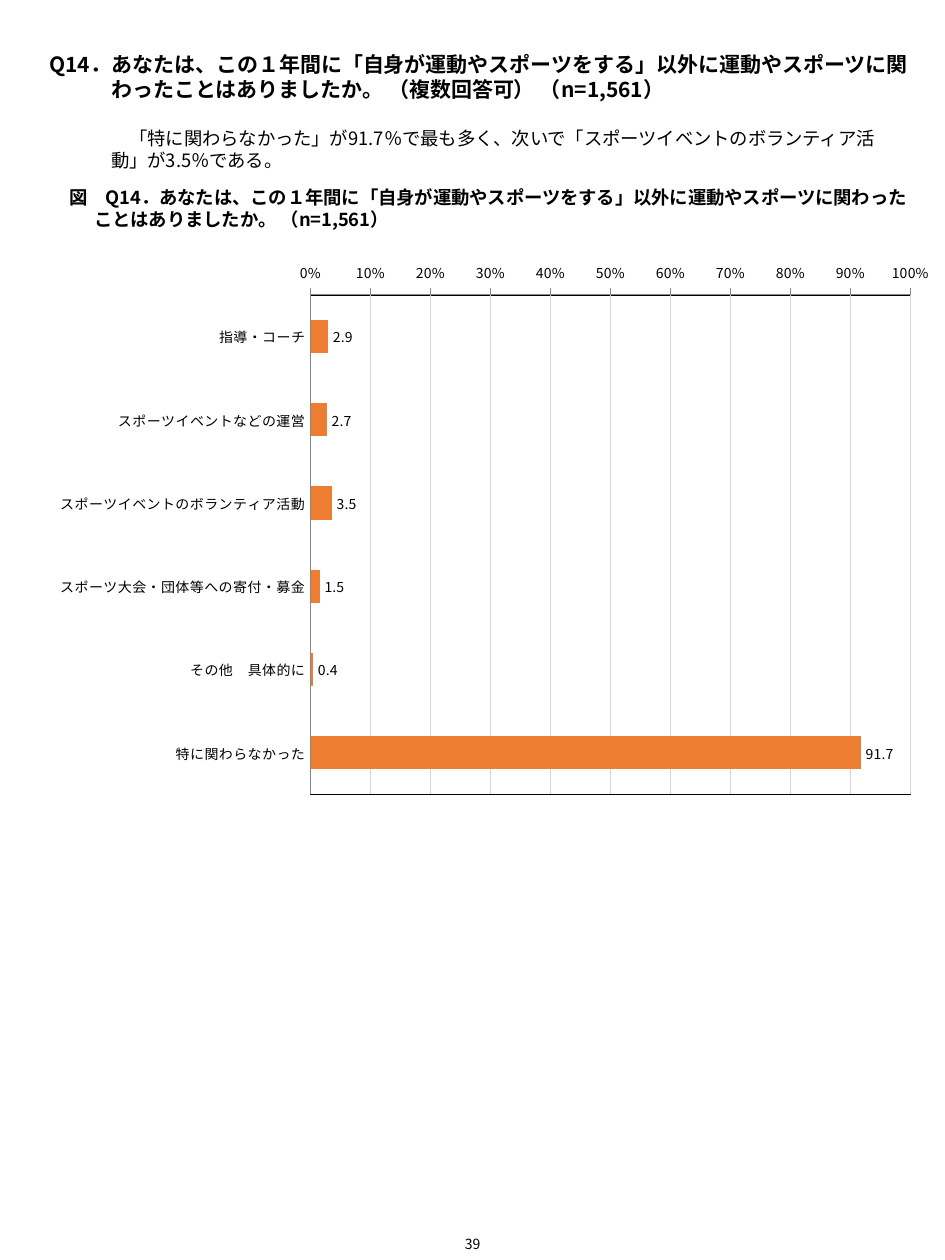
"""Build the survey slide for question 14 with its bar chart."""
from lxml import etree
from pptx import Presentation
from pptx.chart.data import CategoryChartData
from pptx.dml.color import RGBColor
from pptx.enum import chart as ch, text
from pptx.oxml import parse_xml
from pptx.oxml.ns import nsdecls, qn
from pptx.util import Pt

FONT = "Noto Sans CJK JP"
BLACK = RGBColor(0, 0, 0)
ORANGE = RGBColor(0xED, 0x7D, 0x31)
GRAY = RGBColor(0x88, 0x88, 0x88)
PALE = RGBColor(0xD3, 0xD3, 0xD3)
ASK = "Q14．あなたは、この１年間に「自身が運動やスポーツをする」以外に運動やスポーツに関わったことはありましたか。"
COUNT = " （n=1,561）"


def write(para, words, size=10.5, bold=False, left=0, first=0, gap=0,
          align=text.PP_ALIGN.LEFT):
    props = para._p.get_or_add_pPr()
    props.set("marL", str(Pt(left)))
    props.set("indent", str(Pt(first)))
    para.alignment = align
    para.line_spacing = 1.0
    para.space_before = Pt(gap)
    run = para.add_run()
    run.text = words
    font = run.font
    font.name, font.size, font.bold = FONT, Pt(size), bold
    font.color.rgb = BLACK


prs = Presentation()
prs.slide_width, prs.slide_height = Pt(540), Pt(720)
slide = prs.slides.add_slide(prs.slide_layouts[5])

title = slide.shapes.title
title.left, title.top, title.width, title.height = Pt(21), Pt(26), Pt(505.5), Pt(63.5)
frame = title.text_frame
frame.word_wrap = True
frame.auto_size = text.MSO_AUTO_SIZE.NONE
frame.vertical_anchor = text.MSO_ANCHOR.TOP
write(frame.paragraphs[0], ASK + " （複数回答可）" + COUNT,
      size=12, bold=True, left=35.3, first=-35.3)
write(frame.add_paragraph(),
      "\u3000「特に関わらなかった」が91.7％で最も多く、次いで「スポーツイベントのボランティア活動」が3.5％である。".replace("\u3000", "　"),
      left=35.3, gap=14)

label = slide.shapes.add_textbox(Pt(32.4), Pt(103), Pt(494), Pt(32.4)).text_frame
label.word_wrap = True
write(label.paragraphs[0], "図　" + ASK + COUNT, bold=True, left=14.4, first=-14.4)

page = slide.shapes.add_textbox(Pt(257.8), Pt(702.7), Pt(24.5), Pt(17.3)).text_frame
page.word_wrap = False
write(page.paragraphs[0], "39", size=8, align=text.PP_ALIGN.CENTER)

data = CategoryChartData(number_format="0.0")
data.categories = ["指導・コーチ", "スポーツイベントなどの運営", "スポーツイベントのボランティア活動",
                   "スポーツ大会・団体等への寄付・募金", "その他　具体的に", "特に関わらなかった"]
data.add_series("Series 1", [2.9, 2.7, 3.5, 1.5, 0.4, 91.7])
chart = slide.shapes.add_chart(ch.XL_CHART_TYPE.BAR_CLUSTERED, Pt(-355), Pt(149.8),
                               Pt(895), Pt(309.6), data).chart
chart.has_legend = chart.has_title = False

plot = chart.plots[0]
plot.gap_width, plot.overlap, plot.vary_by_categories = 150, -25, False
fill = plot.series[0].format.fill
fill.solid()
fill.fore_color.rgb = ORANGE
plot.has_data_labels = True
marks = plot.data_labels
marks.show_value = True
marks.number_format, marks.number_format_is_linked = "0.0", False
marks.position = ch.XL_LABEL_POSITION.OUTSIDE_END

cat, val = chart.category_axis, chart.value_axis
cat.reverse_order = True
cat.major_tick_mark = ch.XL_TICK_MARK.NONE
val.major_tick_mark = ch.XL_TICK_MARK.OUTSIDE
val.minimum_scale, val.maximum_scale, val.major_unit = 0, 100, 10
val.tick_labels.number_format = '0"%"'
val.tick_labels.number_format_is_linked = False
val.has_major_gridlines = True
grid = val.major_gridlines.format.line
for line, color, width in ((cat.format.line, GRAY, 0.75), (val.format.line, GRAY, 0.75),
                           (grid, PALE, 0.25)):
    line.color.rgb, line.width = color, Pt(width)
for font in (chart.font, cat.tick_labels.font, val.tick_labels.font, marks.font):
    font.name, font.size, font.bold = FONT, Pt(8), False
    font.color.rgb = BLACK

area = chart._chartSpace.find(".//" + qn("c:plotArea"))
for old in area.findall(qn("c:layout")):
    area.remove(old)
spots = {"layoutTarget": "inner", "xMode": "edge", "yMode": "edge",
         "x": 0.595, "y": 0.039, "w": 0.383, "h": 0.943}
layout = etree.Element(qn("c:layout"))
manual = etree.SubElement(layout, qn("c:manualLayout"))
for name, value in spots.items():
    etree.SubElement(manual, qn("c:" + name)).set("val", str(value))
area.insert(0, layout)
area.append(parse_xml(
    f'<c:spPr {nsdecls("c", "a")}><a:noFill/><a:ln w="{Pt(0.75)}"><a:solidFill>'
    f'<a:srgbClr val="{BLACK}"/></a:solidFill></a:ln></c:spPr>'))

for root in (slide._element, chart._chartSpace):
    for latin in list(root.iter(qn("a:latin"))):
        east = etree.Element(qn("a:ea"))
        east.set("typeface", FONT)
        latin.addnext(east)

prs.save("out.pptx")
